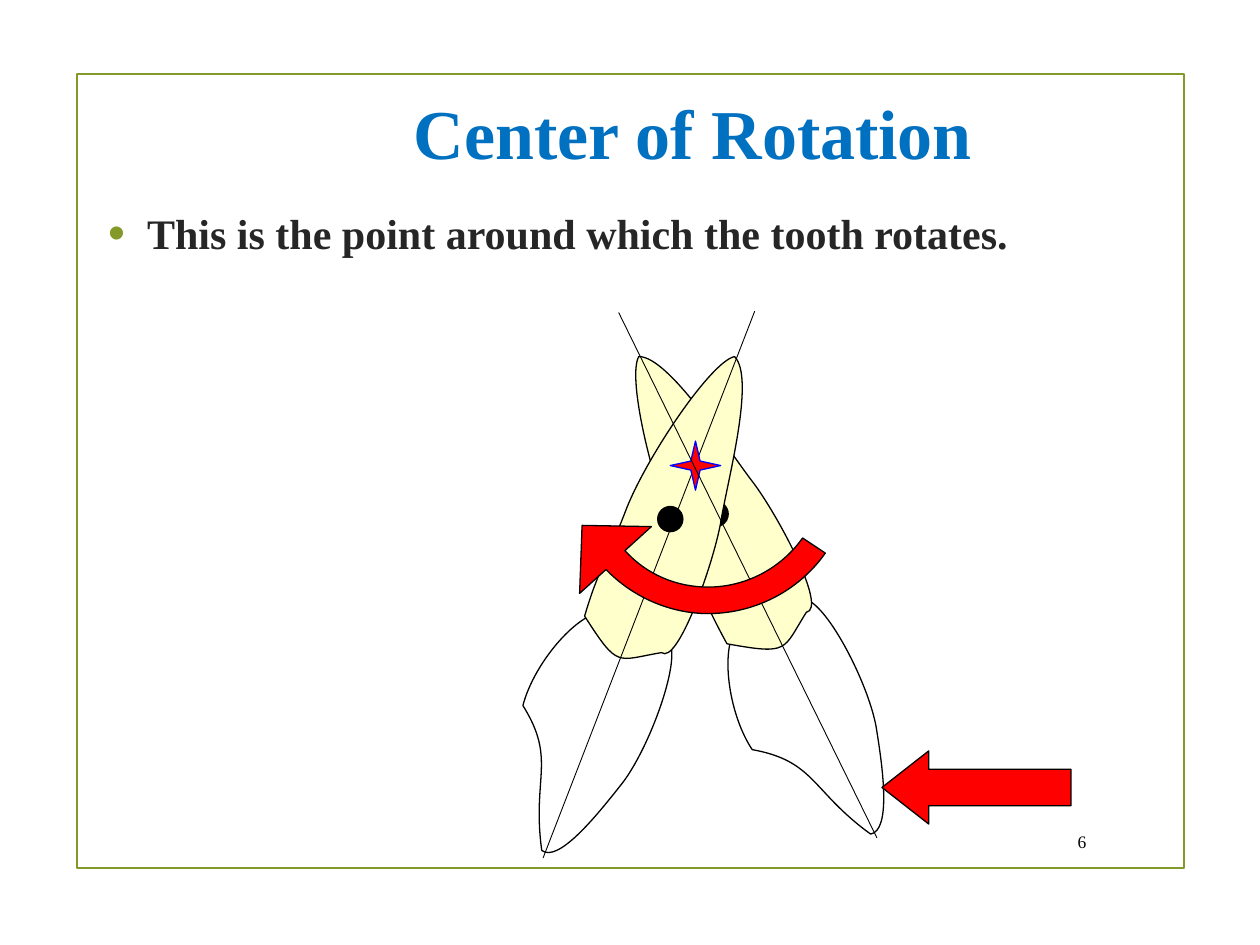
import pptx
import pptx.util
import pptx.dml.color
import pptx.enum.shapes
import pptx.enum.text
import pptx.oxml.ns
import pptx.oxml.xmlchemy

RGBColor = pptx.dml.color.RGBColor
Shape = pptx.enum.shapes.MSO_SHAPE
Align = pptx.enum.text.PP_ALIGN
Anchor = pptx.enum.text.MSO_ANCHOR
qn = pptx.oxml.ns.qn
new_element = pptx.oxml.xmlchemy.OxmlElement

OLIVE = RGBColor(0x83, 0x99, 0x2A)
TITLE_BLUE = RGBColor(0x00, 0x70, 0xC0)
TEXT_GREY = RGBColor(0x26, 0x26, 0x26)
BLACK = RGBColor(0, 0, 0)
WHITE = RGBColor(0xFF, 0xFF, 0xFF)
CREAM = RGBColor(0xFF, 0xFF, 0xCC)
RED = RGBColor(0xFF, 0, 0)
BLUE = RGBColor(0, 0, 0xFF)

COLUMNS, ROWS = 100, 75
CELL = pptx.util.Inches(0.1)

# Outlines in cells of the diagram box: a start point, then
# pairs (straight lines) and sixes (Bezier curves).
RIGHT_TOOTH = {
    "crown": [(18.3, 30.1), (17.2, 32, 17.9, 36.8, 19.7, 39.5),
              (24.7, 40.4, 24.4, 42.8, 29.1, 46.2),
              (30.7, 45.9, 30.1, 41.2, 29.6, 38.1),
              (29.2, 35, 26.3, 29.1, 24.4, 27.8)],
    "root": [(13.9, 23.2), (15.8, 27.1, 16, 28, 17.7, 31.1),
             (22.7, 32, 22.1, 31.6, 24, 28.6),
             (25.7, 28.3, 21.7, 20.8, 19.7, 18.2),
             (17.7, 15.6, 13.1, 8.3, 10.7, 8.3),
             (9.7, 10.1, 12, 19.2, 13.9, 23.2)],
    "center": (15.8, 19.8, 2, 2),
}
LEFT_TOOTH = {
    "crown": [(7.5, 28.6), (5.3, 29.2, 2.3, 32.9, 1.5, 36),
              (4.2, 40.3, 2.2, 41.7, 3, 47.5),
              (4.3, 48.5, 7.3, 44.8, 9.2, 42.4),
              (11.2, 40, 13.6, 33.8, 13.3, 31.5)],
    "root": [(9.6, 20.7), (8, 24.8, 7.4, 25.5, 6.4, 28.9),
             (9.1, 33.1, 8.9, 32.4, 12.5, 31.8),
             (13.8, 32.8, 16.6, 24.8, 17.2, 21.5),
             (17.7, 18.3, 20, 10, 18.3, 8.3),
             (16.4, 8.7, 11.1, 16.6, 9.6, 20.7)],
    "center": (12.2, 20.2, 2, 2),
}
ROTATION_ARROW = [(9.6, 23.7), (11.3, 25.6, 13.7, 26.6, 16.2, 26.6),
                  (19.2, 26.6, 22, 25.1, 23.7, 22.7), (25.5, 23.9),
                  (23.4, 26.9, 19.9, 28.7, 16.2, 28.7),
                  (13.2, 28.7, 10.2, 27.4, 8.1, 25.2),
                  (6, 27.1), (6.2, 21.7), (11.7, 21.8)]


def cells(*values):
    return [round(value * CELL) for value in values]


def within(box, left, top, *size):
    return (box[0] + left, box[1] + top, *size)


def paint(shape, fill=None, line=BLACK, width=0.75):
    shape.shadow.inherit = False
    if fill is None:
        shape.fill.background()
    else:
        shape.fill.solid()
        shape.fill.fore_color.rgb = fill
    shape.line.color.rgb = line
    shape.line.width = pptx.util.Pt(width)


def add_preset(page, kind, box, adjustments=(), **style):
    shape = page.shapes.add_shape(kind, *cells(*box))
    for index, value in enumerate(adjustments):
        shape.adjustments[index] = value
    paint(shape, **style)


def add_outline(page, box, outline, fill):
    start, *segments = outline
    builder = page.shapes.build_freeform(*cells(*within(box, *start)))
    for segment in segments:
        points = zip(segment[::2], segment[1::2])
        builder.add_line_segments([cells(*within(box, *point)) for point in points],
                                  close=False)
    builder.add_line_segments([], close=True)
    shape = builder.convert_to_shape()
    # Turn each run of three control points into a true curve
    steps = iter(list(shape._element.iter(qn("a:lnTo"))))
    for segment in segments:
        first = next(steps)
        if len(segment) == 6:
            first.tag = qn("a:cubicBezTo")
            for _ in range(2):
                step = next(steps)
                first.append(step[0])
                step.getparent().remove(step)
    paint(shape, fill)


def add_axis(page, box, start, end):
    axis = page.shapes.add_connector(pptx.enum.shapes.MSO_CONNECTOR.STRAIGHT,
                                     *cells(*within(box, *start), *within(box, *end)))
    axis.line.color.rgb = BLACK
    axis.line.width = pptx.util.Pt(0.5)
    axis._element.spPr.append(new_element("a:effectLst"))


def add_text(page, box, text, align, anchor, size, color, bold=True):
    frame = page.shapes.add_textbox(*cells(*box)).text_frame
    frame.word_wrap = True
    frame.vertical_anchor = anchor
    para = frame.paragraphs[0]
    para.alignment = align
    span = para.add_run()
    span.text = text
    font = {"name": "Times New Roman", "size": pptx.util.Pt(size), "bold": bold}
    for name, value in font.items():
        setattr(span.font, name, value)
    span.font.color.rgb = color
    return para


def add_bullet(para):
    props = para._p.get_or_add_pPr()
    indent = pptx.util.Inches(0.31)
    props.set("marL", str(indent))
    props.set("indent", str(-indent))
    color = new_element("a:buClr")
    value = new_element("a:srgbClr")
    value.set("val", str(OLIVE))
    color.append(value)
    props.append(color)
    for tag, name, setting in (("a:buSzPct", "val", "115000"),
                               ("a:buFont", "typeface", "Arial"),
                               ("a:buChar", "char", "•")):
        element = new_element(tag)
        element.set(name, setting)
        props.append(element)


def add_tooth(page, box, tooth):
    add_outline(page, box, tooth["crown"], WHITE)
    add_outline(page, box, tooth["root"], CREAM)
    add_preset(page, Shape.OVAL, within(box, *tooth["center"]), fill=BLACK)


def add_diagram(page, box):
    # Teeth before and after tipping
    add_tooth(page, box, RIGHT_TOOTH)
    add_tooth(page, box, LEFT_TOOTH)
    add_axis(page, box, (19.9, 4.7), (3.1, 48.1))
    # Applied force, center of rotation and direction of turn
    add_preset(page, Shape.LEFT_ARROW, within(box, 30, 39.6, 15, 5.8), (0.5, 0.64), fill=RED)
    add_preset(page, Shape.STAR_4_POINT, within(box, 13.2, 15, 4, 3.9), (0.13,),
               fill=RED, line=BLUE)
    add_axis(page, box, (9.1, 4.8), (29.6, 46.5))
    add_outline(page, box, ROTATION_ARROW, RED)


def add_wording(page, box):
    # Title, bullet and page number
    add_text(page, within(box, 6.4, -1.7, 85, 12.5), "Center of Rotation",
             Align.CENTER, Anchor.MIDDLE, 40, TITLE_BLUE)
    para = add_text(page, within(box, 1.5, 10.1, 85, 23.1),
                    "This is the point around which the tooth rotates.",
                    Align.LEFT, Anchor.TOP, 24, TEXT_GREY)
    add_bullet(para)
    add_text(page, within(box, 76.8, 59.3, 4.3, 3.1), "6",
             Align.RIGHT, Anchor.MIDDLE, 10, BLACK, bold=False)


def main():
    deck = pptx.Presentation()
    deck.slide_width, deck.slide_height = cells(COLUMNS, ROWS)
    page = deck.slides.add_slide(deck.slide_layouts[6])
    border = (6.1, 5.9, 87.9, 63)
    add_preset(page, Shape.RECTANGLE, border, line=OLIVE, width=1.25)
    add_wording(page, border)
    add_diagram(page, (40, 20, 50, 50))
    deck.save("out.pptx")


if __name__ == "__main__":
    main()
